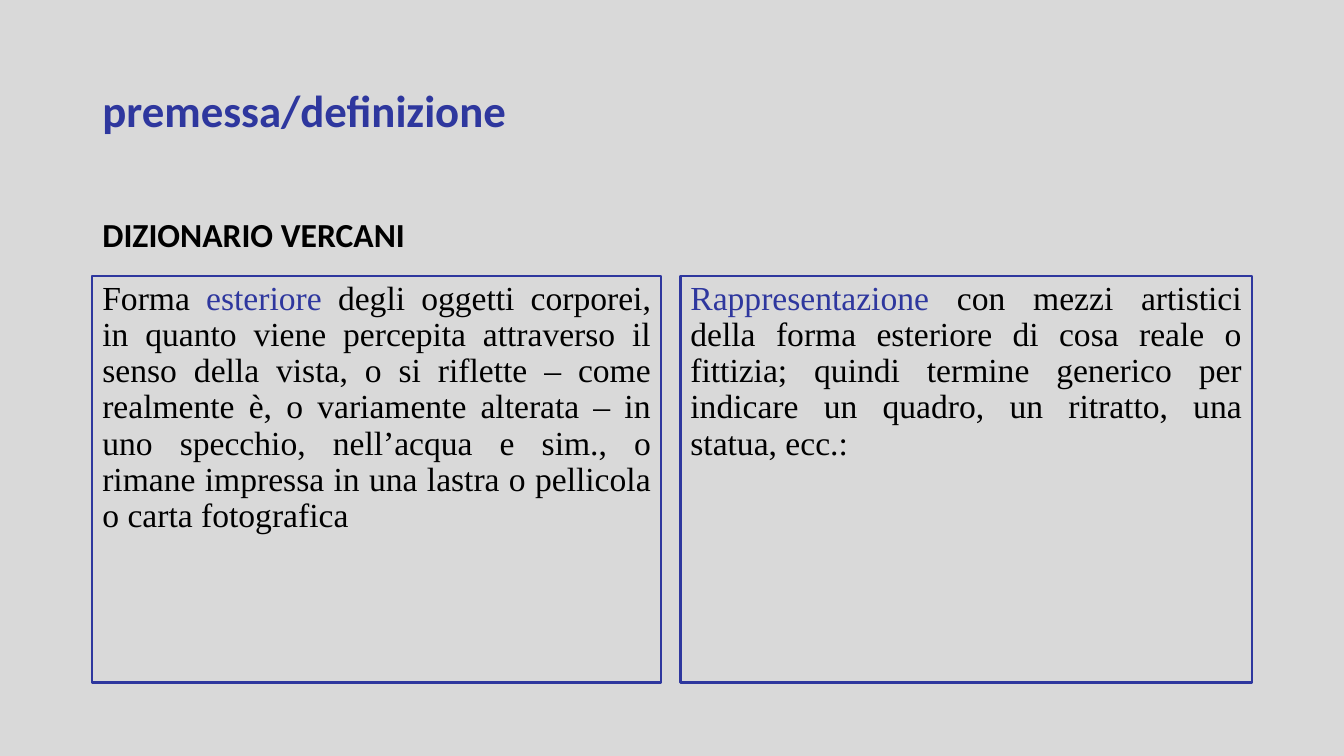
from pptx import Presentation
from pptx import util as u
from pptx.dml.color import RGBColor
from pptx.enum import shapes, text

HUES = {"back": "D9D9D9", "blue": "2E379E", "black": "000000"}
LEFT, WIDE = 2.33, 29.21
ROW, TALL = 6.96, 10.24


class Page:
    def __init__(self, deck):
        self.slide = deck.slides.add_slide(deck.slide_layouts[6])
        fill = self.slide.background.fill
        fill.solid()
        fill.fore_color.rgb = self.hue("back")

    def hue(self, name):
        return RGBColor.from_string(HUES[name])

    def label(self, shape, runs, face, size, bold, align, anchor):
        frame = shape.text_frame
        frame.word_wrap = True
        frame.vertical_anchor = anchor
        para = frame.paragraphs[0]
        para.alignment = align
        para.line_spacing = 0.9
        para.font.name = face
        para.font.size = u.Pt(size)
        para.font.bold = bold
        for words, name in runs:
            run = para.add_run()
            run.text = words
            run.font.color.rgb = self.hue(name)

    def head(self, words, name, size, top, tall, anchor):
        box = self.slide.shapes.add_textbox(
            u.Cm(LEFT), u.Cm(top), u.Cm(WIDE), u.Cm(tall))
        self.label(box, [(words, name)], "Calibri", size, True,
                   text.PP_ALIGN.LEFT, anchor)

    def panel(self, left, wide, runs):
        box = self.slide.shapes.add_shape(
            shapes.MSO_SHAPE.RECTANGLE,
            u.Cm(left), u.Cm(ROW), u.Cm(wide), u.Cm(TALL))
        box.shadow.inherit = False
        box.fill.background()
        box.line.color.rgb = self.hue("blue")
        box.line.width = u.Pt(1.5)
        self.label(box, runs, "Times New Roman", 24, False,
                   text.PP_ALIGN.JUSTIFY, text.MSO_ANCHOR.TOP)


def main():
    deck = Presentation()
    deck.slide_width, deck.slide_height = u.Cm(33.87), u.Cm(19.05)
    page = Page(deck)
    page.head("premessa/definizione", "blue", 32, 1.02, 3.68,
              text.MSO_ANCHOR.MIDDLE)
    page.head("DIZIONARIO VERCANI", "black", 24, 4.67, 1.88,
              text.MSO_ANCHOR.BOTTOM)
    page.panel(LEFT, 14.33, [
        ("Forma ", "black"),
        ("esteriore", "blue"),
        (" degli oggetti corporei, in quanto viene percepita attraverso il "
         "senso della vista, o si riflette – come realmente è, o variamente "
         "alterata – in uno specchio, nell’acqua e sim., o rimane impressa "
         "in una lastra o pellicola o carta fotografica", "black")])
    page.panel(17.15, 14.4, [
        ("Rappresentazione", "blue"),
        (" con mezzi artistici della forma esteriore di cosa reale o "
         "fittizia; quindi termine generico per indicare un quadro, un "
         "ritratto, una statua, ecc.:", "black")])
    deck.save("out.pptx")


if __name__ == "__main__":
    main()
